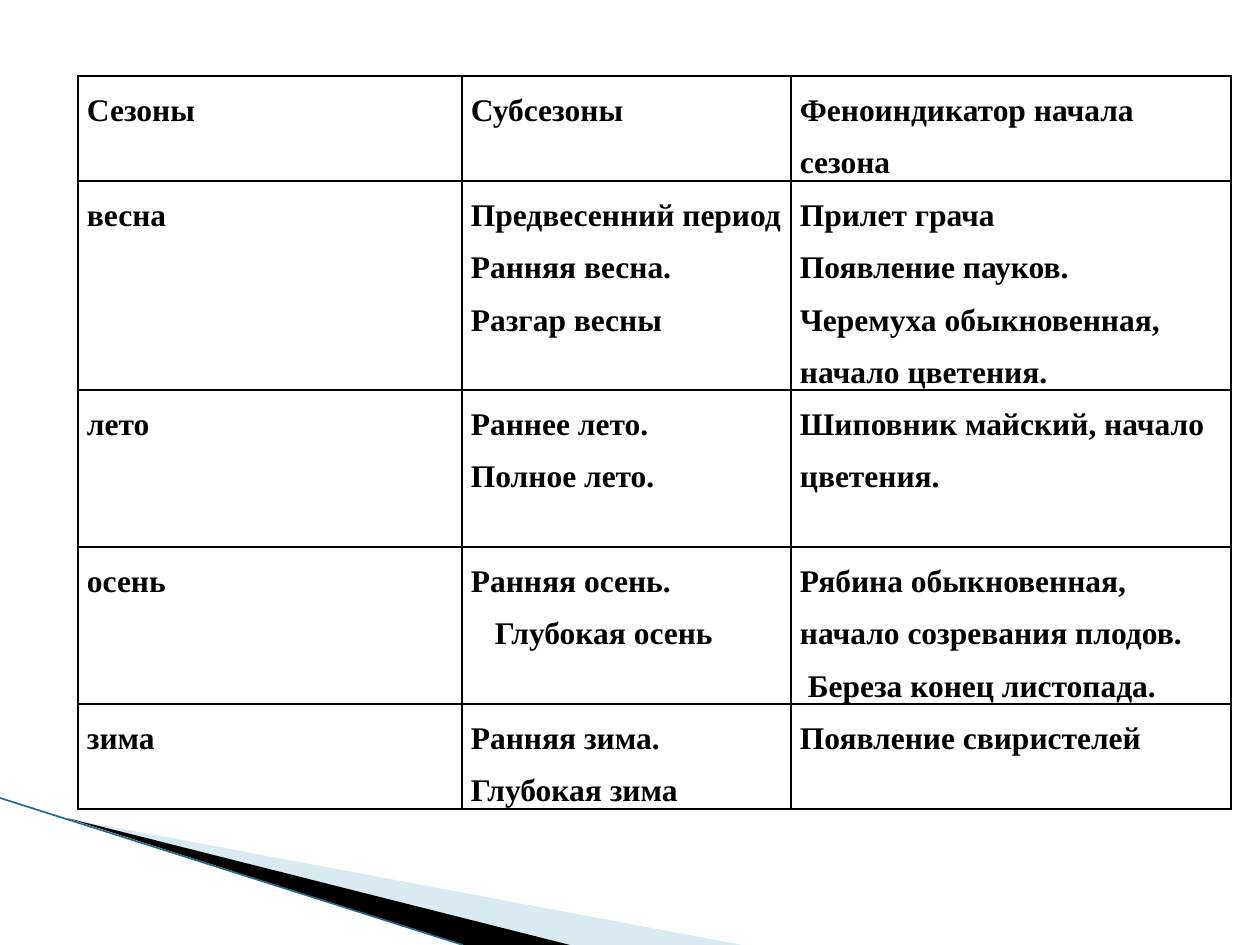
from lxml import etree
from pptx import Presentation
from pptx.dml.color import RGBColor
from pptx.enum.shapes import MSO_CONNECTOR
from pptx.oxml.ns import qn
from pptx.util import Emu, Pt

STRAIGHT = MSO_CONNECTOR.STRAIGHT
BLACK = RGBColor(0x00, 0x00, 0x00)
PALE_BLUE = RGBColor(0xA0, 0xCB, 0xDC)
TEAL = RGBColor(0x1F, 0x6F, 0x86)

EMU_PER_PX = 914400 / 126

COLUMN_WIDTHS = [384, 329, 440]
ROW_HEIGHTS = [105, 209, 157, 157, 105]
# Each cell is a list of paragraphs; a pair is (text, left indent in px)
SEASONS = [
    [["Сезоны"], ["Субсезоны"], ["Феноиндикатор начала сезона"]],
    [["весна"],
     ["Предвесенний период", "Ранняя весна.", "Разгар весны"],
     ["Прилет грача", "Появление пауков.",
      "Черемуха обыкновенная, начало цветения."]],
    [["лето"], ["Раннее лето.", "Полное лето."],
     ["Шиповник майский, начало цветения."]],
    [["осень"], ["Ранняя осень.", ("Глубокая осень", 24)],
     ["Рябина обыкновенная, начало созревания плодов.",
      ("Береза конец листопада.", 8)]],
    [["зима"], ["Ранняя зима.", "Глубокая зима"],
     ["Появление свиристелей"]],
]


def px(length):
    return Emu(round(length * EMU_PER_PX))


class SlideBuilder:
    FONT = {"name": "Times New Roman", "size": Pt(18), "bold": True}
    MARGINS = {"margin_left": px(9), "margin_right": px(9),
               "margin_top": 0, "margin_bottom": 0}
    PLAIN_TABLE = {"first_row": False, "horz_banding": False}
    LINE_SPACING = 1.5

    def __init__(self, slide):
        self.slide = slide

    @staticmethod
    def apply(target, values):
        for attribute, value in values.items():
            setattr(target, attribute, value)

    def polygon(self, points, color, opacity=100):
        builder = self.slide.shapes.build_freeform(
            *points[0], scale=EMU_PER_PX)
        builder.add_line_segments(points[1:], close=True)
        wedge = builder.convert_to_shape()
        wedge.shadow.inherit = False
        wedge.line.fill.background()
        wedge.fill.solid()
        wedge.fill.fore_color.rgb = color
        if opacity < 100:
            rgb = wedge.fill._xPr.find(".//" + qn("a:srgbClr"))
            etree.SubElement(rgb, qn("a:alpha"), val=str(opacity * 1000))

    def line(self, start, end, color, width):
        edge = self.slide.shapes.add_connector(
            STRAIGHT, *map(px, start + end))
        edge.line.color.rgb = color
        edge.line.width = Pt(width)
        etree.SubElement(edge._element.spPr, qn("a:effectLst"))

    def borders(self, cell, color, width):
        properties = cell._tc.get_or_add_tcPr()
        for side in ("a:lnL", "a:lnR", "a:lnT", "a:lnB"):
            border = etree.SubElement(properties, qn(side), w=str(Pt(width)))
            fill = etree.SubElement(border, qn("a:solidFill"))
            etree.SubElement(fill, qn("a:srgbClr"), val=str(color))

    def cell(self, cell, paragraphs):
        self.apply(cell, self.MARGINS)
        self.borders(cell, BLACK, 1)
        cell.fill.background()
        frame = cell.text_frame
        for index, content in enumerate(paragraphs):
            text, indent = (content if isinstance(content, tuple)
                            else (content, 0))
            paragraph = (frame.add_paragraph() if index
                         else frame.paragraphs[0])
            paragraph.line_spacing = self.LINE_SPACING
            if indent:
                paragraph._p.get_or_add_pPr().set("marL", str(px(indent)))
            run = paragraph.add_run()
            run.text = text
            self.apply(run.font, self.FONT)
            run.font.color.rgb = BLACK

    def table(self, left, top, widths, heights, rows):
        table = self.slide.shapes.add_table(
            len(heights), len(widths), px(left), px(top),
            px(sum(widths)), px(sum(heights))).table
        self.apply(table, self.PLAIN_TABLE)
        for column, width in zip(table.columns, widths):
            column.width = px(width)
        for row, height, contents in zip(table.rows, heights, rows):
            row.height = px(height)
            for cell, paragraphs in zip(row.cells, contents):
                self.cell(cell, paragraphs)


def main():
    presentation = Presentation()
    presentation.slide_width = px(1260)
    presentation.slide_height = px(945)
    blank_layout = presentation.slide_layouts[6]
    builder = SlideBuilder(presentation.slides.add_slide(blank_layout))

    # Corner decoration
    builder.polygon([(69, 819), (742, 945), (570, 945)], PALE_BLUE, 40)
    builder.polygon([(67, 818), (570, 945), (463, 945)], BLACK)
    builder.line((0, 798), (463, 945), TEAL, 0.95)

    # Seasons and their natural signs
    builder.table(78, 76, COLUMN_WIDTHS, ROW_HEIGHTS, SEASONS)

    presentation.save("out.pptx")


if __name__ == "__main__":
    main()
